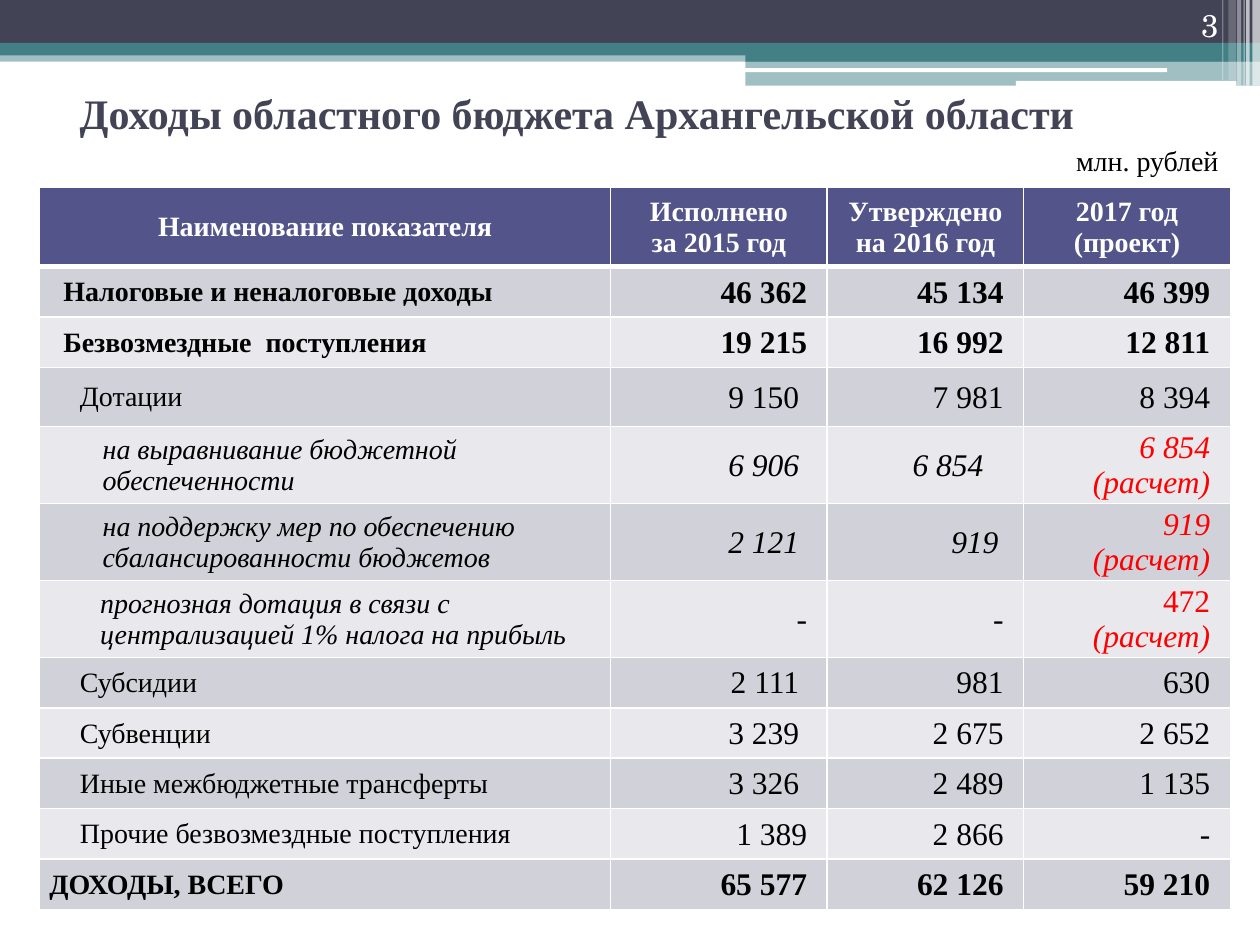
from dataclasses import dataclass

from lxml.etree import SubElement
from pptx import Presentation
from pptx.dml.color import RGBColor
from pptx.enum.shapes import MSO_SHAPE
from pptx.enum.text import MSO_ANCHOR, PP_ALIGN
from pptx.oxml.ns import qn
from pptx.util import Pt


@dataclass(frozen=True)
class Theme:
    dark: str = "424456"
    teal: str = "438086"
    white: str = "FFFFFF"
    black: str = "000000"
    red: str = "FF0000"
    head: str = "53548A"
    odd: str = "D1D1DA"
    even: str = "E9E9ED"
    serif: str = "Times New Roman"
    school: str = "TeX Gyre Schola"
    title: int = 24
    label: int = 16
    number: int = 18


@dataclass(frozen=True)
class Bar:
    left: float
    top: float
    width: float
    height: float
    color: str
    alpha: int = 100
    form: MSO_SHAPE = MSO_SHAPE.RECTANGLE


@dataclass(frozen=True)
class Style:
    size: int
    color: str
    bold: bool = False
    italic: bool = False
    font: str = "Times New Roman"


@dataclass(frozen=True)
class Row:
    name: str
    values: tuple
    height: float = 28.8
    indent: float = 23
    bold: bool = False
    italic: bool = False  # slanted name
    slant: bool = False  # slanted numbers
    gaps: tuple = (16, 11.5, 11.5)  # space right of each number


T = Theme()
EVEN_GAPS = (11.5, 11.5, 11.5)
ROUND = MSO_SHAPE.ROUNDED_RECTANGLE

BARS = [
    Bar(0, 28.8, 720, 6.5, T.teal, 50),
    Bar(0, 0, 720, 24.5, T.dark),
    Bar(0, 24.5, 720, 7.2, T.teal),
    Bar(426, 28, 294, 7.2, T.teal),
    Bar(426, 34.8, 294, 14.2, T.teal, 50),
    Bar(425.5, 39, 241.5, 2.2, T.white, 100, ROUND),
    Bar(580.5, 46.2, 126, 2.8, T.white, 100, ROUND),
    # Pale stripes at the right edge
    Bar(715.7, 0, 4.3, 49, T.white, 65),
    Bar(712.1, 0, 2.1, 49, T.white, 65),
    Bar(710.6, 0, 0.7, 49, T.white, 60),
    Bar(707, 0, 2.2, 49, T.white, 40),
    Bar(702, 0, 4.3, 46, T.white, 20),
    Bar(698.4, 0, 0.7, 46, T.white, 30),
]

HEADS = ("Наименование показателя", "Исполнено\nза 2015 год",
         "Утверждено\nна 2016 год", "2017 год\n(проект)")
COLS = (326.2, 123.8, 112.3, 118.1)
HEAD_HEIGHT = 45.5

ROWS = [
    Row("Налоговые и неналоговые доходы", ("46 362", "45 134", "46 399"),
        indent=13.5, bold=True, gaps=EVEN_GAPS),
    Row("Безвозмездные  поступления", ("19 215", "16 992", "12 811"),
        indent=13.5, bold=True, gaps=EVEN_GAPS),
    Row("Дотации", ("9 150", "7 981", "8 394"), height=33.8),
    Row("на выравнивание бюджетной обеспеченности",
        ("6 906", "6 854", "6 854\n(расчет)"), height=44, indent=36,
        italic=True, slant=True, gaps=(16, 23, 11.5)),
    Row("на поддержку мер по обеспечению сбалансированности бюджетов",
        ("2 121", "919", "919\n(расчет)"), height=44, indent=36,
        italic=True, slant=True, gaps=(16, 14.4, 11.5)),
    Row("прогнозная дотация в связи с централизацией 1% налога на прибыль",
        ("-", "-", "472\n(расчет)"), height=44, indent=34.5,
        italic=True, gaps=EVEN_GAPS),
    Row("Субсидии", ("2 111", "981", "630")),
    Row("Субвенции", ("3 239", "2 675", "2 652")),
    Row("Иные межбюджетные трансферты", ("3 326", "2 489", "1 135")),
    Row("Прочие безвозмездные поступления", ("1 389", "2 866", "-"),
        gaps=EVEN_GAPS),
    Row("ДОХОДЫ, ВСЕГО", ("65 577", "62 126", "59 210"),
        indent=5.5, bold=True, gaps=EVEN_GAPS),
]


def draw_bar(slide, bar: Bar) -> None:
    shape = slide.shapes.add_shape(bar.form, Pt(bar.left), Pt(bar.top),
                                   Pt(bar.width), Pt(bar.height))
    shape.shadow.inherit = False
    shape.line.fill.background()
    shape.fill.solid()
    shape.fill.fore_color.rgb = RGBColor.from_string(bar.color)
    if bar.alpha < 100:
        tint = shape._element.spPr.find(".//" + qn("a:srgbClr"))
        SubElement(tint, qn("a:alpha"), val=str(bar.alpha * 1000))


def add_line(frame, index: int, text: str, style: Style, align) -> None:
    para = frame.paragraphs[0] if index == 0 else frame.add_paragraph()
    para.alignment = align
    run = para.add_run()
    run.text = text
    font = run.font
    font.name, font.size = style.font, Pt(style.size)
    font.bold, font.italic = style.bold, style.italic
    font.color.rgb = RGBColor.from_string(style.color)


def add_note(slide, box: tuple, text: str, style: Style, anchor) -> None:
    shape = slide.shapes.add_textbox(*map(Pt, box))
    frame = shape.text_frame
    frame.word_wrap = True
    frame.vertical_anchor = anchor
    add_line(frame, 0, text, style, PP_ALIGN.RIGHT)


def dress(cell, fill: str, left: float, right: float, top: int, base: int) -> None:
    """Set the insets, white borders and fill of a cell."""
    cell.vertical_anchor = MSO_ANCHOR.MIDDLE
    cell.margin_left, cell.margin_right = Pt(left), Pt(right)
    cell.margin_top, cell.margin_bottom = Pt(0.7), Pt(0)
    props = cell._tc.get_or_add_tcPr()
    for side, width in (("L", 1), ("R", 1), ("T", top), ("B", base)):
        line = SubElement(props, qn("a:ln" + side), w=str(Pt(width)))
        SubElement(SubElement(line, qn("a:solidFill")), qn("a:srgbClr"), val=T.white)
    cell.fill.solid()
    cell.fill.fore_color.rgb = RGBColor.from_string(fill)


def fill_row(table, index: int, row: Row) -> None:
    table.rows[index].height = Pt(row.height)
    fill = T.odd if index % 2 else T.even
    top = 3 if index == 1 else 1
    name = table.cell(index, 0)
    dress(name, fill, row.indent, 0.7, top, 1)
    add_line(name.text_frame, 0, row.name,
             Style(T.label, T.black, row.bold, row.italic), PP_ALIGN.LEFT)
    for col, (value, gap) in enumerate(zip(row.values, row.gaps), 1):
        cell = table.cell(index, col)
        dress(cell, fill, 0.7, gap, top, 1)
        lines = value.split("\n")
        color = T.red if len(lines) > 1 else T.black
        for spot, text in enumerate(lines):
            slant = row.slant or text.startswith("(")
            add_line(cell.text_frame, spot, text,
                     Style(T.number, color, row.bold, slant), PP_ALIGN.RIGHT)


def add_grid(slide) -> None:
    height = HEAD_HEIGHT + sum(row.height for row in ROWS)
    table = slide.shapes.add_table(len(ROWS) + 1, len(COLS), Pt(22.7), Pt(106.8),
                                   Pt(sum(COLS)), Pt(height)).table
    table.rows[0].height = Pt(HEAD_HEIGHT)
    for col, (width, head) in enumerate(zip(COLS, HEADS)):
        table.columns[col].width = Pt(width)
        cell = table.cell(0, col)
        dress(cell, T.head, 7.2, 7.2, 1, 3)
        for spot, text in enumerate(head.split("\n")):
            add_line(cell.text_frame, spot, text,
                     Style(T.label, T.white, True), PP_ALIGN.CENTER)
    for index, row in enumerate(ROWS, 1):
        fill_row(table, index, row)


def main() -> None:
    deck = Presentation()
    deck.slide_width, deck.slide_height = Pt(720), Pt(540)
    slide = deck.slides.add_slide(deck.slide_layouts[5])

    # Banner
    for bar in BARS:
        draw_bar(slide, bar)

    # Title, in front of the banner
    title = slide.shapes.title
    slide.shapes._spTree.append(title._element)
    title.left, title.top, title.width, title.height = map(Pt, (0, 44.6, 720, 39.6))
    title.text_frame.vertical_anchor = MSO_ANCHOR.MIDDLE
    title.text_frame.margin_right = Pt(67.8)
    add_line(title.text_frame, 0, "Доходы областного бюджета Архангельской области",
             Style(T.title, T.dark, True), PP_ALIGN.CENTER)

    # Income table, unit and page number
    add_grid(slide)
    add_note(slide, (579.6, 78.5, 123.8, 26.6), "млн. рублей",
             Style(T.label, T.black), MSO_ANCHOR.TOP)
    add_note(slide, (643.7, 0, 59.8, 28.8), "3",
             Style(T.number, T.white, font=T.school), MSO_ANCHOR.BOTTOM)
    deck.save("out.pptx")


if __name__ == "__main__":
    main()
